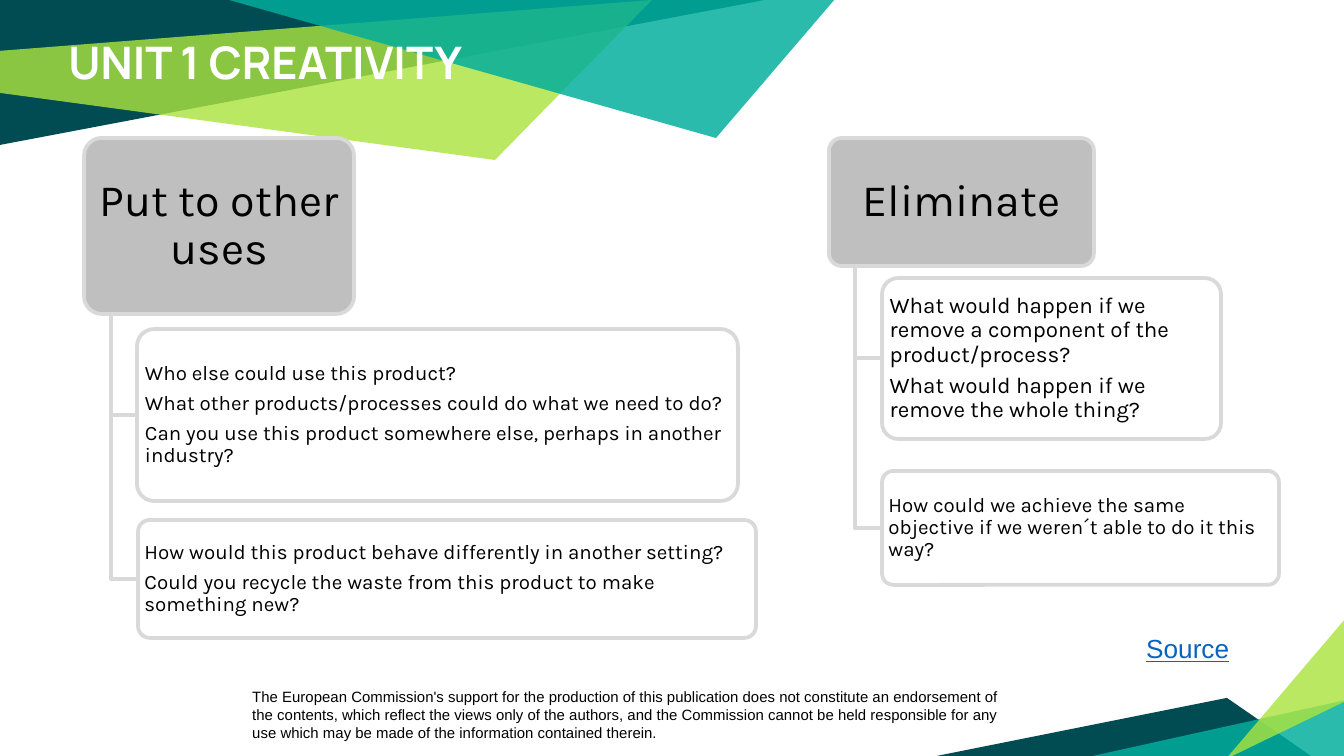
from lxml.etree import SubElement
from pptx import Presentation
from pptx.dml.color import RGBColor
from pptx.enum.shapes import MSO_SHAPE
from pptx.enum.text import MSO_ANCHOR as Anchor, MSO_AUTO_SIZE as AutoSize, PP_ALIGN as Align
from pptx.oxml.ns import qn
from pptx.util import Pt

SCALE = 914400 / 134.4  # EMU per px
COLORS = {
    "black": "000000", "white": "FFFFFF", "petrol": "004C52", "lime": "ABE33F",
    "teal": "00AE9D", "head": "BFBFBF", "border": "D9D9D9", "link": "0563C1",
}

# Content
TITLE = "UNIT 1 CREATIVITY"
DISCLAIMER = (
    "The European Commission's support for the production of this publication does not "
    "constitute an endorsement of the contents, which reflect the views only of the authors, "
    "and the Commission cannot be held responsible for any use which may be made of the "
    "information contained therein."
)
# Each branch: head text and box, then children as (box, text size, paragraphs)
BRANCHES = [
    ("Put to other uses", (84, 138, 270, 176), [
        ((137, 329, 601, 172), 11, [
            "Who else could use this product?",
            "What other products/processes could do what we need to do?",
            "Can you use this product somewhere else, perhaps in another industry?",
        ]),
        ((138, 520, 618, 118), 11, [
            "How would this product behave differently in another setting?",
            "Could you recycle the waste from this product to make something new?",
        ]),
    ]),
    ("Eliminate", (829, 138, 265, 128), [
        ((882, 278, 339, 161), 12, [
            "What would happen if we remove a component of the product/process?",
            "What would happen if we remove the whole thing?",
        ]),
        ((882, 471, 397, 114), 11, [
            "How could we achieve the same objective if we weren´t able to do it this way?",
        ]),
    ]),
]
# Background facets: colour, opacity in percent, corners
FACETS = [
    ("petrol", 100, [(0, 0), (0, 145), (765, 0)]),
    ("lime", 81, [(-1, 51), (0, 93), (495, 160), (652, 0)]),
    ("petrol", 100, [(937, 756), (1311, 756), (1227, 698)]),
    ("teal", 83, [(1346, 700), (1346, 759), (1079, 759)]),
    ("lime", 81, [(1346, 701), (1346, 618), (1226, 759)]),
    ("teal", 83, [(229, 0), (716, 138), (835, -1), (819, 0)]),
]


def px(value):
    return round(value * SCALE)


def rgb(name):
    return RGBColor.from_string(COLORS[name])


def set_opacity(shape, percent):
    for color in shape.element.spPr.iter(qn("a:srgbClr")):
        SubElement(color, qn("a:alpha")).set("val", str(percent * 1000))


def write(shape, paragraphs, size, font="Karla", color="black", bold=False, underline=False,
          align=Align.LEFT, anchor=Anchor.TOP, margins=None, line_spacing=None,
          space_after=0, wrap=True):
    frame = shape.text_frame
    frame.word_wrap = wrap
    frame.auto_size = AutoSize.NONE
    frame.vertical_anchor = anchor
    if margins:
        frame.margin_left = frame.margin_right = px(margins[0])
        frame.margin_top = frame.margin_bottom = px(margins[1])
    for index, text in enumerate(paragraphs):
        paragraph = frame.add_paragraph() if index else frame.paragraphs[0]
        paragraph.alignment = align
        paragraph.line_spacing = line_spacing
        paragraph.space_after = Pt(space_after)
        run = paragraph.add_run()
        run.text = text
        run.font.name, run.font.size = font, Pt(size)
        run.font.bold, run.font.underline = bold, underline
        run.font.color.rgb = rgb(color)


def set_border(shape):
    shape.line.color.rgb = rgb("border")
    shape.line.width = Pt(2)


def add_outline(points, close):
    builder = slide.shapes.build_freeform(*points[0], scale=SCALE)
    builder.add_line_segments(points[1:], close=close)
    shape = builder.convert_to_shape()
    shape.shadow.inherit = False
    return shape


def add_box(box, fill):
    shape = slide.shapes.add_shape(MSO_SHAPE.ROUNDED_RECTANGLE, *map(px, box))
    shape.adjustments[0] = 0.1
    shape.shadow.inherit = False
    shape.fill.solid()
    shape.fill.fore_color.rgb = rgb(fill)
    set_border(shape)
    return shape


presentation = Presentation()
presentation.slide_width, presentation.slide_height = px(1344), px(756)
slide = presentation.slides.add_slide(presentation.slide_layouts[5])

# Disclaimer
disclaimer = slide.shapes.add_textbox(*map(px, (239, 681, 778, 67)))
write(disclaimer, [DISCLAIMER], 8, font="Arial")

# Background facets
for color, opacity, corners in FACETS:
    facet = add_outline(corners, close=True)
    facet.fill.solid()
    facet.fill.fore_color.rgb = rgb(color)
    facet.line.fill.background()
    if opacity < 100:
        set_opacity(facet, opacity)

# Title, brought in front of the facets
title = slide.shapes.title
title.left, title.top, title.width, title.height = map(px, (55, 28, 442, 67))
write(title, [TITLE], 24, font="Manrope", color="white", bold=True, wrap=False)
title.element.getparent().append(title.element)

# Branches: head box, elbow lines and child boxes
for head_text, head_box, children in BRANCHES:
    left, top, width, height = head_box
    head = add_box(head_box, "head")
    write(head, [head_text], 24, align=Align.CENTER, anchor=Anchor.MIDDLE,
          margins=(7, 4), line_spacing=0.9)
    trunk, bottom = left + width // 10, top + height
    for child_box, size, paragraphs in children:
        child_left, child_top, _, child_height = child_box
        middle = child_top + child_height // 2
        elbow = add_outline([(trunk, bottom), (trunk, middle), (child_left, middle)], close=False)
        elbow.fill.background()
        set_border(elbow)
        child = add_box(child_box, "white")
        write(child, paragraphs, size, anchor=Anchor.MIDDLE, margins=(3, 2),
              line_spacing=0.9, space_after=4)

# Source label
source = slide.shapes.add_textbox(*map(px, (1133, 626, 144, 46)))
write(source, ["Source"], 14, font="Arial", color="link", underline=True)

presentation.save("out.pptx")
